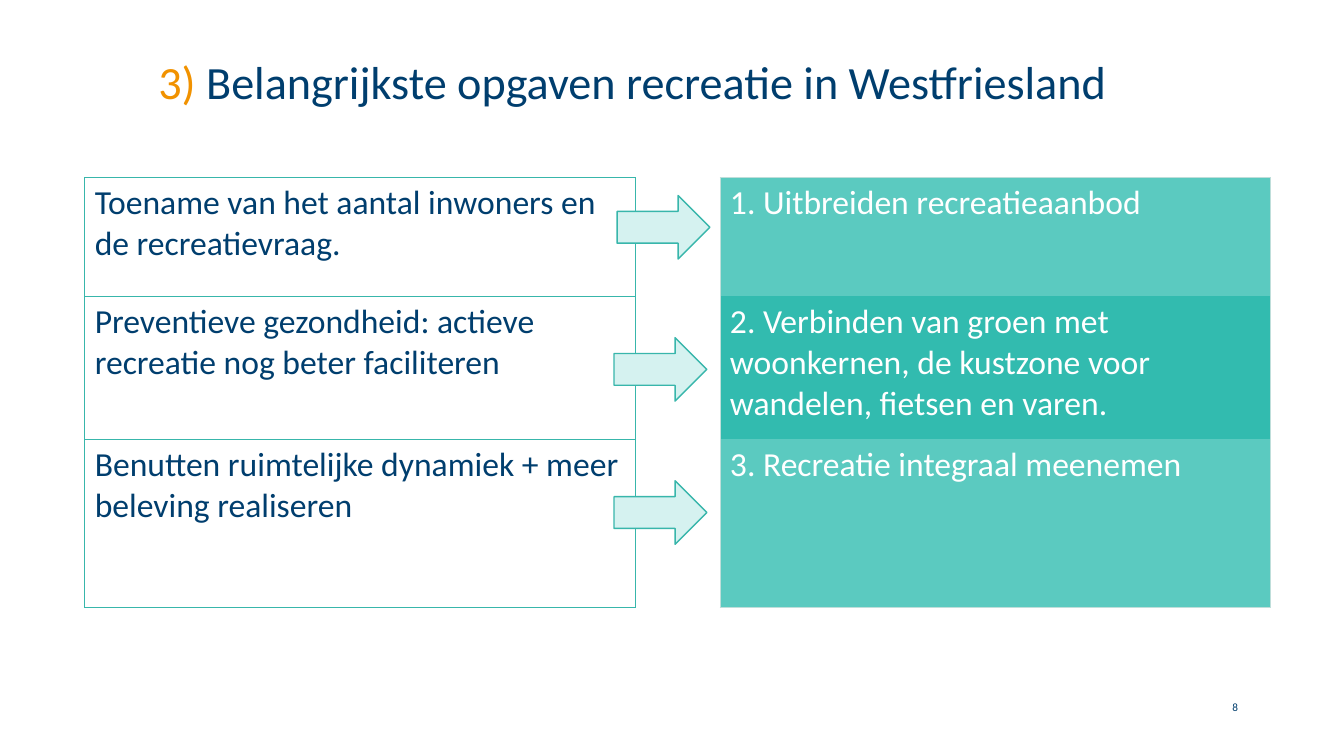
from dataclasses import dataclass

from lxml import etree
from pptx import Presentation
from pptx.dml.color import RGBColor
from pptx.enum import shapes, text
from pptx.oxml import ns
from pptx.util import Inches, Pt

COLORS = {
    "navy": "003E6E",
    "orange": "F19200",
    "white": "FFFFFF",
    "teal": "32BBAF",
    "light_teal": "5BCAC0",
    "pale_teal": "D5F2F0",
    "teal_line": "38B6AB",
    "pale_line": "BFDEDA",
}
FONT = "Calibri"
TABLE_TOP, TABLE_WIDTH = 1.76, 5.46
ROW_HEIGHTS = (1.18, 1.42, 1.67)
ARROW_WIDTH, ARROW_HEIGHT = 0.92, 0.63


@dataclass
class Column:
    left: float
    texts: tuple[str, ...]
    font_color: str
    fills: tuple[str | None, ...]
    line_color: str
    inner_lines: bool


@dataclass
class Arrow:
    left: float
    top: float


COLUMNS = (
    Column(
        0.84,
        (
            "Toename van het aantal inwoners en de recreatievraag.",
            "Preventieve gezondheid: actieve recreatie nog beter faciliteren",
            "Benutten ruimtelijke dynamiek + meer beleving realiseren",
        ),
        "navy", (None, None, None), "teal_line", True,
    ),
    Column(
        7.14,
        (
            "1. Uitbreiden recreatieaanbod",
            "2. Verbinden van groen met woonkernen, de kustzone voor wandelen, fietsen en varen.",
            "3. Recreatie integraal meenemen",
        ),
        "white", ("light_teal", "teal", "light_teal"), "pale_line", False,
    ),
)
ARROWS = (Arrow(6.12, 1.94), Arrow(6.09, 3.35), Arrow(6.09, 4.77))


def rgb(name: str) -> RGBColor:
    return RGBColor.from_string(COLORS[name])


def style_font(font, size: float, color: str) -> None:
    font.name = FONT
    font.size = Pt(size)
    font.color.rgb = rgb(color)


def add_text_frame(slide, left: float, top: float, width: float, height: float):
    box = slide.shapes.add_textbox(Inches(left), Inches(top), Inches(width), Inches(height))
    frame = box.text_frame
    frame.word_wrap = True
    frame.margin_left = frame.margin_right = frame.margin_top = frame.margin_bottom = 0
    return frame


def set_borders(cell, color: str, visible: dict[str, bool]) -> None:
    properties = cell._tc.get_or_add_tcPr()
    for position, (side, shown) in enumerate(visible.items()):
        line = etree.Element(ns.qn(f"a:ln{side}"), w=str(Pt(0.5)))
        if shown:
            fill = etree.SubElement(line, ns.qn("a:solidFill"))
            etree.SubElement(fill, ns.qn("a:srgbClr"), val=COLORS[color])
        else:
            etree.SubElement(line, ns.qn("a:noFill"))
        properties.insert(position, line)


def add_column(slide, column: Column) -> None:
    table = slide.shapes.add_table(
        len(ROW_HEIGHTS), 1, Inches(column.left), Inches(TABLE_TOP),
        Inches(TABLE_WIDTH), Inches(sum(ROW_HEIGHTS)),
    ).table
    table.first_row = table.horz_banding = False
    last = len(ROW_HEIGHTS) - 1
    for index, (height, wording, fill) in enumerate(zip(ROW_HEIGHTS, column.texts, column.fills)):
        table.rows[index].height = Inches(height)
        cell = table.cell(index, 0)
        cell.text = wording
        style_font(cell.text_frame.paragraphs[0].font, 24, column.font_color)
        if fill is None:
            cell.fill.background()
        else:
            cell.fill.solid()
            cell.fill.fore_color.rgb = rgb(fill)
        set_borders(cell, column.line_color, {
            "L": True,
            "R": True,
            "T": index == 0 or column.inner_lines,
            "B": index == last or column.inner_lines,
        })


def add_arrow(slide, arrow: Arrow) -> None:
    shape = slide.shapes.add_shape(
        shapes.MSO_SHAPE.RIGHT_ARROW, Inches(arrow.left), Inches(arrow.top),
        Inches(ARROW_WIDTH), Inches(ARROW_HEIGHT),
    )
    shape.shadow.inherit = False
    shape.fill.solid()
    shape.fill.fore_color.rgb = rgb("pale_teal")
    shape.line.color.rgb = rgb("teal_line")
    shape.line.width = Pt(1)


def main() -> None:
    deck = Presentation()
    deck.slide_width, deck.slide_height = Inches(13.33), Inches(7.5)
    slide = deck.slides.add_slide(deck.slide_layouts[6])

    # Title
    title = add_text_frame(slide, 1.57, 0.59, 10.18, 0.79).paragraphs[0]
    title.line_spacing = 0.9
    for wording, color in (
        ("3) ", "orange"),
        ("Belangrijkste opgaven recreatie in Westfriesland", "navy"),
    ):
        run = title.add_run()
        run.text = wording
        style_font(run.font, 33, color)

    # Page number
    page_number = add_text_frame(slide, 11.76, 6.95, 0.52, 0.31).paragraphs[0]
    page_number.text = "8"
    page_number.alignment = text.PP_ALIGN.RIGHT
    style_font(page_number.font, 8, "navy")

    # Developments and the tasks that follow from them
    for column in COLUMNS:
        add_column(slide, column)
    for arrow in ARROWS:
        add_arrow(slide, arrow)

    deck.save("out.pptx")


if __name__ == "__main__":
    main()
